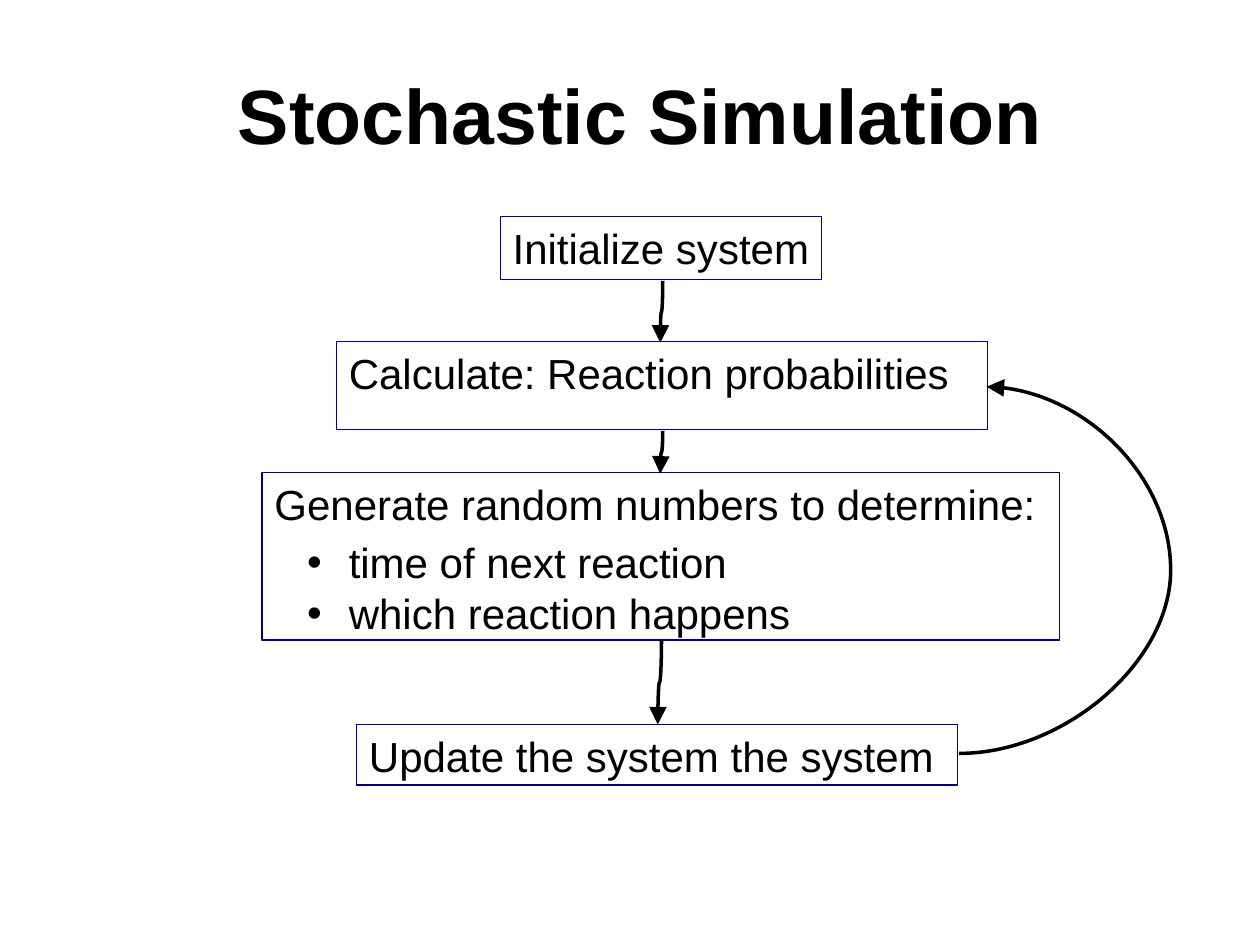
from dataclasses import dataclass

from lxml.etree import SubElement
from pptx import Presentation
from pptx.dml.color import RGBColor
from pptx.enum.shapes import MSO_CONNECTOR as Link, MSO_SHAPE as Shape
from pptx.enum.text import MSO_ANCHOR as Anchor, PP_ALIGN as Align
from pptx.oxml.ns import qn
from pptx.util import Inches, Pt

BLACK = RGBColor(0x00, 0x00, 0x00)
WHITE = RGBColor(0xFF, 0xFF, 0xFF)
NAVY = RGBColor(0x00, 0x00, 0x80)
FONT = "Arial"


@dataclass(frozen=True)
class Step:
    left: float
    top: float
    width: float
    height: float
    text: str
    bullets: tuple[str, ...] = ()


@dataclass(frozen=True)
class Flow:
    start_x: float
    start_y: float
    end_x: float
    end_y: float


STEPS = (
    Step(3.97, 1.72, 2.55, 0.5, "Initialize system"),
    Step(2.67, 2.71, 5.17, 0.7, "Calculate: Reaction probabilities"),
    Step(2.08, 3.75, 6.33, 1.33, "Generate random numbers to determine:",
         ("time of next reaction", "which reaction happens")),
    Step(2.83, 5.75, 4.77, 0.48, "Update the system the system"),
)
DOWN_FLOWS = (
    Flow(5.26, 2.23, 5.24, 2.72),
    Flow(5.26, 3.42, 5.24, 3.76),
    Flow(5.25, 5.08, 5.22, 5.75),
)
RETURN_FLOW = Flow(7.61, 5.98, 7.83, 3.07)
RETURN_BULGE = 764000


def style_text(paragraph, size: int, bold: bool = False) -> None:
    paragraph.alignment = Align.LEFT
    for run in paragraph.runs:
        run.font.name = FONT
        run.font.size = Pt(size)
        run.font.bold = bold
        run.font.color.rgb = BLACK


def add_bullet(paragraph) -> None:
    properties = paragraph._p.get_or_add_pPr()
    properties.set("marL", str(Inches(0.59)))
    properties.set("indent", str(Inches(-0.33)))
    SubElement(properties, qn("a:buFont"), typeface=FONT)
    SubElement(properties, qn("a:buChar"), char="•")


def add_title(slide, text: str) -> None:
    title = slide.shapes.add_textbox(
        Inches(1.79), Inches(0.28), Inches(7.63), Inches(1.25))
    frame = title.text_frame
    frame.word_wrap = True
    frame.vertical_anchor = Anchor.MIDDLE
    frame.text = text
    style_text(frame.paragraphs[0], 44, bold=True)


def add_step(slide, step: Step) -> None:
    box = slide.shapes.add_shape(
        Shape.RECTANGLE, Inches(step.left), Inches(step.top),
        Inches(step.width), Inches(step.height))
    box.shadow.inherit = False
    box.fill.solid()
    box.fill.fore_color.rgb = WHITE
    box.line.color.rgb = NAVY
    box.line.width = Pt(0.75)

    frame = box.text_frame
    frame.word_wrap = True
    frame.vertical_anchor = Anchor.TOP
    frame.margin_left = Inches(0.1)
    frame.margin_top = frame.margin_right = Inches(0.05)
    frame.margin_bottom = Inches(0)
    frame.text = step.text
    style_text(frame.paragraphs[0], 24)
    for index, text in enumerate(step.bullets):
        bullet = frame.add_paragraph()
        bullet.text = text
        bullet.space_before = Pt(0 if index else 4.5)
        add_bullet(bullet)
        style_text(bullet, 24)


def add_arrow(slide, flow: Flow):
    arrow = slide.shapes.add_connector(
        Link.CURVE, Inches(flow.start_x), Inches(flow.start_y),
        Inches(flow.end_x), Inches(flow.end_y))
    arrow.line.color.rgb = BLACK
    arrow.line.width = Pt(2)
    SubElement(arrow.line._get_or_add_ln(), qn("a:tailEnd"),
               type="triangle", w="lg", len="lg")
    SubElement(arrow._element.spPr, qn("a:effectLst"))
    return arrow


def add_down_arrow(slide, flow: Flow) -> None:
    middle_x = (flow.start_x + flow.end_x) / 2
    middle_y = (flow.start_y + flow.end_y) / 2
    half_drop = (flow.end_y - flow.start_y) / 2
    half_shift = (flow.start_x - flow.end_x) / 2
    arrow = add_arrow(slide, Flow(middle_x - half_drop, middle_y - half_shift,
                                  middle_x + half_drop, middle_y + half_shift))
    arrow._element.spPr.find(qn("a:xfrm")).set("rot", str(90 * 60000))


def add_return_arrow(slide, flow: Flow, bulge: int) -> None:
    arrow = add_arrow(slide, flow)
    geometry = arrow._element.spPr.find(qn("a:prstGeom"))
    adjustments = geometry.find(qn("a:avLst"))
    if adjustments is None:
        adjustments = SubElement(geometry, qn("a:avLst"))
    SubElement(adjustments, qn("a:gd"), name="adj1", fmla=f"val {bulge}")


def main() -> None:
    deck = Presentation()
    deck.slide_width = Inches(10)
    deck.slide_height = Inches(7.5)
    slide = deck.slides.add_slide(deck.slide_layouts[6])
    add_title(slide, "Stochastic Simulation")
    for step in STEPS:
        add_step(slide, step)
    for flow in DOWN_FLOWS:
        add_down_arrow(slide, flow)
    add_return_arrow(slide, RETURN_FLOW, RETURN_BULGE)
    deck.save("out.pptx")


if __name__ == "__main__":
    main()
